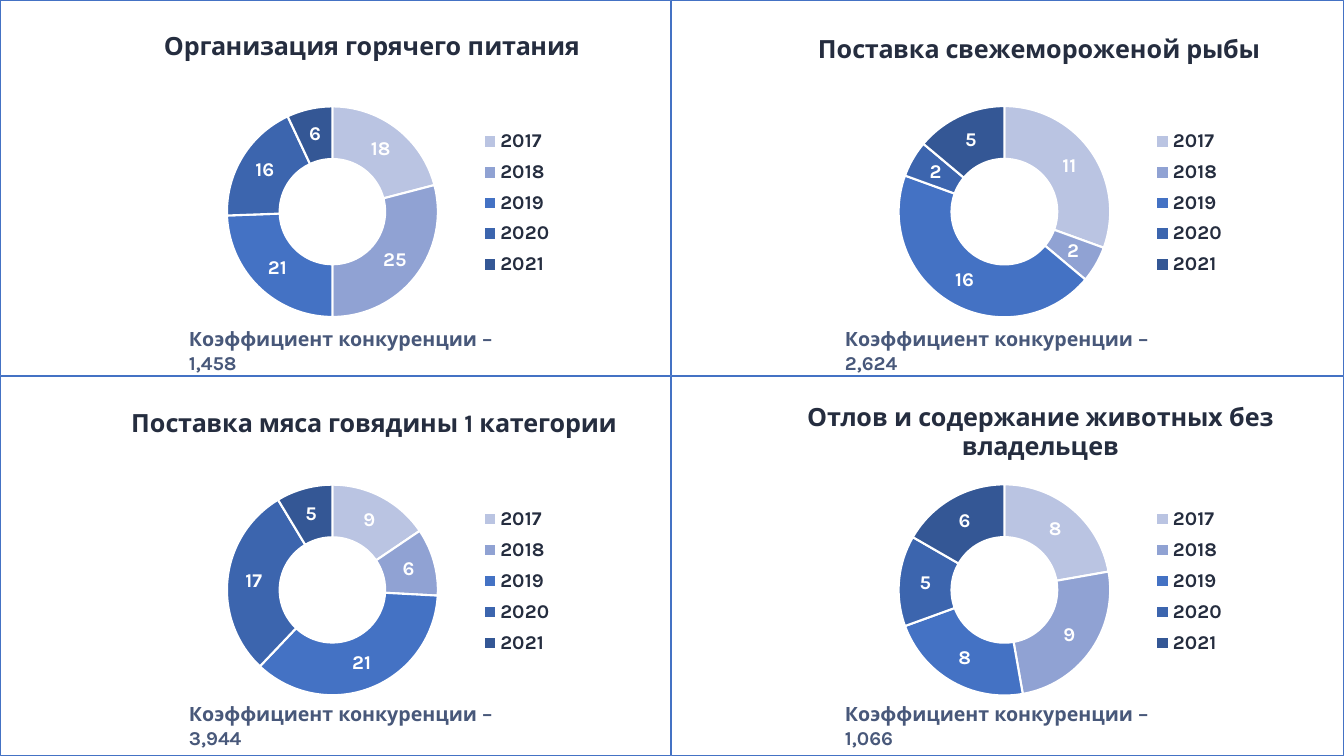
from pptx import Presentation, util as u
from pptx.chart.data import CategoryChartData
from pptx.dml.color import RGBColor
from pptx.enum import chart as charts
from pptx.enum import text
from pptx.oxml import parse_xml
from pptx.oxml.ns import nsdecls

BACKGROUND = RGBColor(0xE5, 0xE9, 0xF2)
WHITE = RGBColor(0xFF, 0xFF, 0xFF)
DARK = RGBColor(0x25, 0x2D, 0x3F)
CAPTION = RGBColor(0x48, 0x58, 0x7A)
BORDER = RGBColor(0x44, 0x72, 0xC4)
YEAR_COLOURS = {
    "2017": RGBColor(0xBA, 0xC4, 0xE2),
    "2018": RGBColor(0x90, 0xA2, 0xD3),
    "2019": RGBColor(0x44, 0x72, 0xC4),
    "2020": RGBColor(0x3C, 0x65, 0xAE),
    "2021": RGBColor(0x34, 0x57, 0x95),
}

# column, row, title, title offset in px, values by year, competition ratio
PANELS = [
    (0, 0, "Организация горячего питания", (159, 24), (18, 25, 21, 16, 6), "1,458"),
    (0, 1, "Поставка мяса говядины 1 категории", (126, 25), (9, 6, 21, 17, 5), "3,944"),
    (1, 0, "Поставка свежемороженой рыбы", (142, 28), (11, 2, 16, 2, 5), "2,624"),
    (1, 1, "Отлов и содержание животных без владельцев", (131, 19), (8, 9, 8, 5, 6), "1,066"),
]

SCALE = 9071  # EMU in one px
SLIDE = (1344, 756)
COLUMNS = (0, 671, 1344)
ROWS = (0, 376, 756)
CAPTION_LEFT = (179, 835)
CAPTION_TOP = (322, 697)
CAPTION_SIZE = (330, 34)
PLOT = {"x": 0.338, "y": 0.28, "w": 0.315, "h": 0.567}
LEGEND = {"x": 0.706, "y": 0.325, "w": 0.13, "h": 0.43}


def px(*lengths):
    return [u.Emu(length * SCALE) for length in lengths]


def set_font(font, size, colour):
    for name, value in {"name": "Karla", "size": u.Pt(size), "bold": True}.items():
        setattr(font, name, value)
    font.color.rgb = colour


def place(parent, index, fractions, inner=False):
    """Give a chart part a manual layout, as fractions of the chart."""
    for old in parent.xpath("c:layout"):
        parent.remove(old)
    target = '<c:layoutTarget val="inner"/>' if inner else ""
    modes = "".join(f'<c:{key}Mode val="edge"/>' for key in "xy")
    sizes = "".join(f'<c:{key} val="{value:.3f}"/>' for key, value in fractions.items())
    parent.insert(index, parse_xml(
        f'<c:layout {nsdecls("c")}><c:manualLayout>{target}{modes}{sizes}'
        '</c:manualLayout></c:layout>'))


def frame_chart(chart):
    """Fill the chart area and outline it."""
    area = parse_xml(
        f'<c:spPr {nsdecls("c", "a")}><a:solidFill><a:srgbClr val="{WHITE}"/></a:solidFill>'
        f'<a:ln w="{u.Pt(1)}"><a:solidFill><a:srgbClr val="{BORDER}"/></a:solidFill></a:ln>'
        '</c:spPr>')
    chart.element.xpath("c:chart")[0].addnext(area)


def add_doughnut(page, column, row, title, title_offset, values):
    left, top = COLUMNS[column], ROWS[row]
    width, height = COLUMNS[column + 1] - left, ROWS[row + 1] - top
    data = CategoryChartData()
    data.categories = list(YEAR_COLOURS)
    data.add_series("Series 1", values)
    chart = page.shapes.add_chart(
        charts.XL_CHART_TYPE.DOUGHNUT, *px(left, top, width, height), data).chart
    chart.font.name, chart.font.size = "Calibri", u.Pt(10)
    frame_chart(chart)

    chart.has_title = True
    heading = chart.chart_title.text_frame
    heading.text = title
    set_font(heading.paragraphs[0].runs[0].font, 18, DARK)
    chart.has_legend = True
    chart.legend.position = charts.XL_LEGEND_POSITION.RIGHT
    chart.legend.include_in_layout = False
    set_font(chart.legend.font, 14, DARK)

    plot = chart.plots[0]
    plot.vary_by_categories = True
    plot.has_data_labels = True
    labels = plot.data_labels
    labels.show_value, labels.show_percentage = True, False
    set_font(labels.font, 14, WHITE)
    for index, colour in enumerate(YEAR_COLOURS.values()):
        form = plot.series[0].points[index].format
        form.fill.solid()
        form.fill.fore_color.rgb = colour
        form.line.color.rgb = WHITE
        form.line.width = u.Pt(1.5)

    title_place = {"x": title_offset[0] / width, "y": title_offset[1] / height}
    place(chart.element.xpath("c:chart/c:title")[0], 1, title_place)
    place(chart.element.xpath("c:chart/c:legend")[0], 1, LEGEND)
    place(chart.element.xpath("c:chart/c:plotArea")[0], 0, PLOT, inner=True)


def add_caption(page, column, row, ratio):
    box = page.shapes.add_textbox(*px(CAPTION_LEFT[column], CAPTION_TOP[row], *CAPTION_SIZE))
    frame = box.text_frame
    frame.word_wrap = True
    frame.vertical_anchor = text.MSO_ANCHOR.TOP
    span = frame.paragraphs[0].add_run()
    span.text = f"Коэффициент конкуренции – {ratio}"
    set_font(span.font, 14, CAPTION)


def main():
    deck = Presentation()
    deck.slide_width, deck.slide_height = px(*SLIDE)
    page = deck.slides.add_slide(deck.slide_layouts[6])
    page.background.fill.solid()
    page.background.fill.fore_color.rgb = BACKGROUND
    for column, row, title, title_offset, values, ratio in PANELS:
        add_doughnut(page, column, row, title, title_offset, values)
        add_caption(page, column, row, ratio)
    deck.save("out.pptx")


if __name__ == "__main__":
    main()
